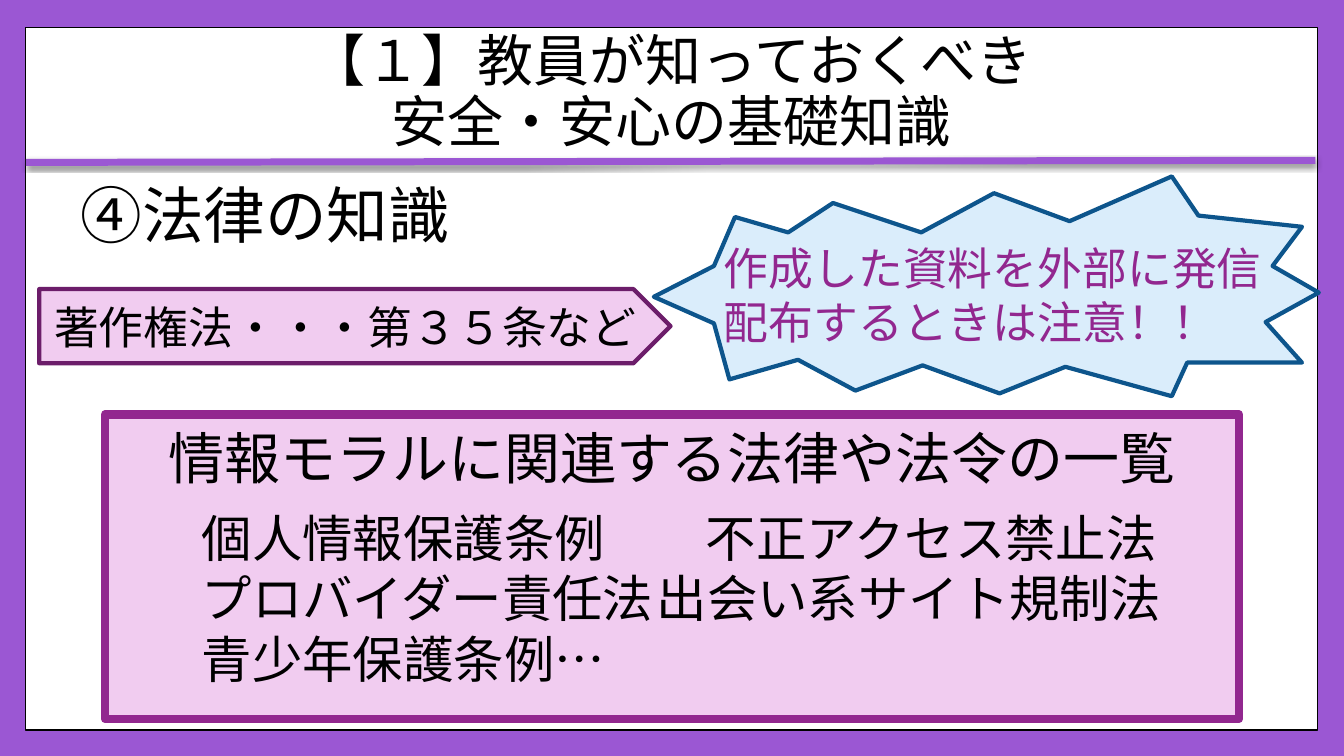
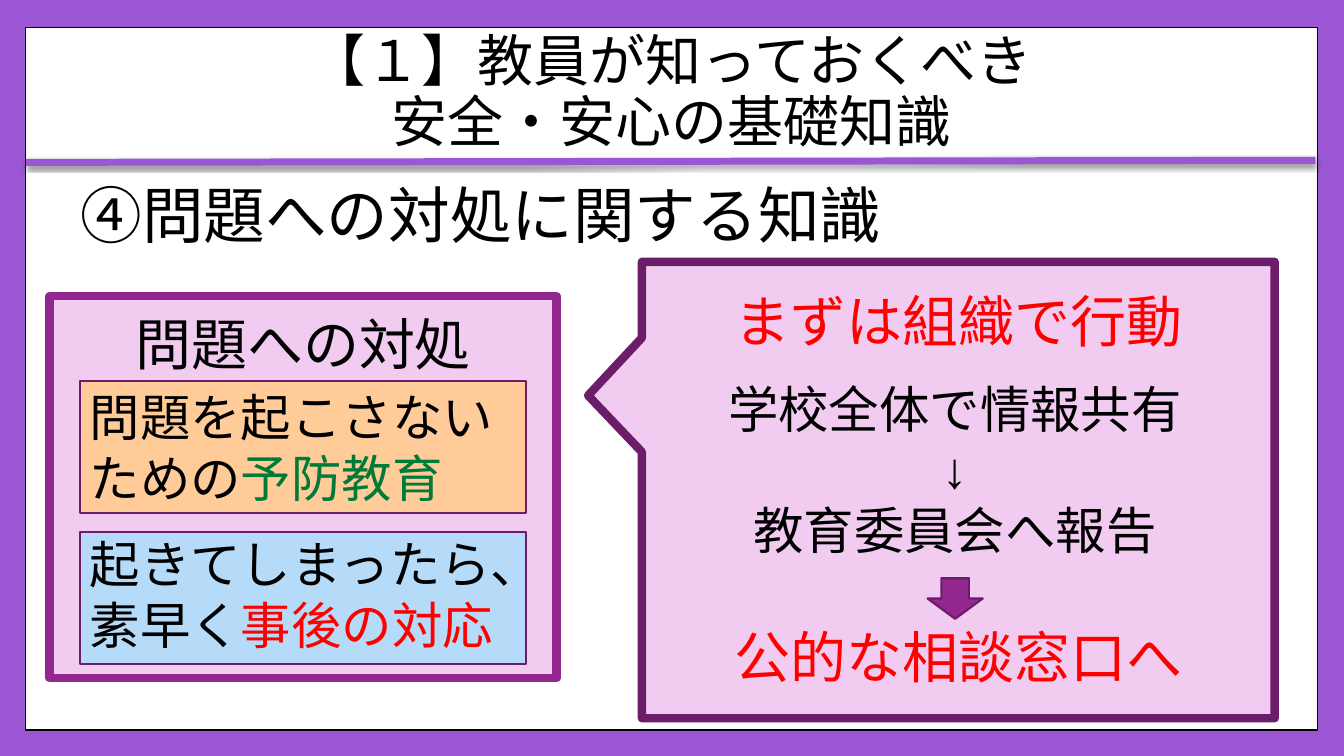
from lxml import etree
from pptx import Presentation
from pptx.dml.color import RGBColor
from pptx.enum.shapes import MSO_CONNECTOR, MSO_SHAPE
from pptx.enum.text import MSO_ANCHOR, PP_ALIGN
from pptx.oxml.ns import qn
from pptx.util import Pt

RECTANGLE = MSO_SHAPE.RECTANGLE
PENTAGON = MSO_SHAPE.PENTAGON
CALLOUT = MSO_SHAPE.RECTANGULAR_CALLOUT
DOWN_ARROW = MSO_SHAPE.DOWN_ARROW
STRAIGHT = MSO_CONNECTOR.STRAIGHT
TOP, MIDDLE = MSO_ANCHOR.TOP, MSO_ANCHOR.MIDDLE
LEFT, CENTER = PP_ALIGN.LEFT, PP_ALIGN.CENTER

COLORS = {
    "frame": "9B57D3",
    "white": "FFFFFF",
    "black": "000000",
    "pink": "F1CCF0",
    "purple": "92278F",
    "plum": "6C1D6A",
    "sky": "DAEDFB",
    "navy": "0D558C",
    "orange": "FFCC99",
    "blue": "B5DBF8",
    "green": "007A37",
    "red": "FF0000",
}
TITLE_FONT, BODY_FONT = "Roboto", "Arial"
TITLE = "【１】教員が知っておくべき\n安全・安心の基礎知識"

BURST_POINTS = [
    (467, 212), (510, 190), (525, 155), (563, 166), (595, 145), (658, 166),
    (710, 138), (764, 158), (837, 126), (856, 154), (930, 162), (909, 190),
    (942, 209), (904, 230), (930, 259), (848, 259), (837, 283), (761, 262),
    (714, 281), (659, 261), (611, 279), (570, 257), (521, 271), (510, 231),
]


def rgb(name):
    return RGBColor.from_string(COLORS[name])


def paint(shape, fill, line, weight):
    shape.shadow.inherit = False
    shape.fill.solid()
    shape.fill.fore_color.rgb = rgb(fill)
    shape.line.color.rgb = rgb(line)
    shape.line.width = Pt(weight)


def add_box(page, kind, bounds, fill, line, weight):
    box = page.shapes.add_shape(kind, *map(Pt, bounds))
    paint(box, fill, line, weight)
    return box


def set_tab(para, position):
    """Put one left tab stop, in points, ahead of the paragraph's font."""
    tabs = etree.Element(qn("a:tabLst"))
    etree.SubElement(tabs, qn("a:tab"), pos=str(Pt(position)), algn="l")
    para.font  # makes sure that the font element exists
    para._p.pPr.find(qn("a:defRPr")).addprevious(tabs)


def write(shape, lines, size, color="black", font=BODY_FONT, align=LEFT,
          anchor=TOP, spacing=None, gap=None, inset_top=3.6):
    """Write paragraphs; a line is a string or a list of (text, color)."""
    frame = shape.text_frame
    frame.word_wrap = True
    frame.vertical_anchor = anchor
    frame.margin_top = Pt(inset_top)
    for index, line in enumerate(lines):
        para = frame.add_paragraph() if index else frame.paragraphs[0]
        para.alignment = align
        para.line_spacing = spacing
        if index and gap:
            para.space_before = Pt(gap)
        para.font.size = Pt(size)
        para.font.name = font
        para.font.color.rgb = rgb(color)
        if isinstance(line, str):
            para.text = line
            continue
        for text, span_color in line:
            span = para.add_run()
            span.text = text
            if span_color != color:
                span.font.color.rgb = rgb(span_color)
    return frame


def add_text(page, bounds, lines, size, **style):
    box = page.shapes.add_textbox(*map(Pt, bounds))
    return write(box, lines, size, **style)


def add_title_rule(page):
    rule = page.shapes.add_connector(
        STRAIGHT, Pt(18.5), Pt(116), Pt(939.5), Pt(114.5))
    rule.line.color.rgb = rgb("frame")
    rule.line.width = Pt(5)
    effects = etree.SubElement(rule._element.spPr, qn("a:effectLst"))
    shadow = etree.SubElement(
        effects, qn("a:outerShdw"), blurRad=str(Pt(3)), dist=str(Pt(2)),
        dir="5400000", rotWithShape="0")
    shade = etree.SubElement(shadow, qn("a:srgbClr"), val=COLORS["black"])
    etree.SubElement(shade, qn("a:alpha"), val="45000")


def add_page(deck, heading):
    """Add a page with the shared frame, title, rule and a heading."""
    page = deck.slides.add_slide(deck.slide_layouts[6])
    add_box(page, RECTANGLE, (18, 19.5, 923, 502), "white", "black", 1)
    add_title_rule(page)
    add_text(page, (18.5, 26, 922, 82), [TITLE], 40, font=TITLE_FONT,
             align=CENTER, anchor=MIDDLE, spacing=0.9)
    add_text(page, (50.5, 129, 864, 60), [heading], 44, spacing=0.9)
    return page


def add_panel(page, bounds, heading, inset_top):
    panel = add_box(page, RECTANGLE, bounds, "pink", "purple", 6)
    write(panel, [heading], 40, align=CENTER, spacing=0.8,
          inset_top=inset_top)


def add_burst(page):
    builder = page.shapes.build_freeform(*BURST_POINTS[0], scale=Pt(1))
    builder.add_line_segments(BURST_POINTS[1:], close=True)
    paint(builder.convert_to_shape(), "sky", "navy", 3)


def build_laws(deck):
    page = add_page(deck, "④法律の知識")
    add_panel(page, (75, 296, 810, 217.5),
              "情報モラルに関連する法律や法令の一覧", 16)

    # Copyright law and its warning
    plate = add_box(page, PENTAGON, (28, 206.5, 451, 53), "pink", "plum", 3)
    write(plate, ["著作権法・・・第３５条など"], 32, font=TITLE_FONT,
          align=CENTER, anchor=MIDDLE)
    add_burst(page)
    add_text(page, (510, 168.5, 400, 85),
             ["作成した資料を外部に発信", "配布するときは注意！！"], 32,
             color="purple")

    # List of laws
    laws = add_text(page, (137, 358.5, 803, 138),
                    ["個人情報保護条例\t不正アクセス禁止法",
                     "プロバイダー責任法\t出会い系サイト規制法",
                     "青少年保護条例…"], 36)
    for para, position in zip(laws.paragraphs, (360, 325)):
        set_tab(para, position)


def build_responses(deck):
    page = add_page(deck, "④問題への対処に関する知識")

    # Prevention and follow-up
    add_panel(page, (35.5, 211.5, 362, 273), "問題への対処", 19)
    prevention = add_box(page, RECTANGLE, (57, 272, 319, 94.5),
                         "orange", "plum", 1.5)
    write(prevention, [[("問題を起こさないための", "black"),
                        ("予防教育", "green")]], 36, anchor=MIDDLE)
    follow_up = add_box(page, RECTANGLE, (57, 380, 319, 94.5),
                        "blue", "plum", 1.5)
    write(follow_up, [[("起きてしまったら、素早く", "black"),
                       ("事後の対応", "red")]], 36, inset_top=1)

    # Steps for acting as an organisation
    callout = add_box(page, CALLOUT, (458.5, 187, 452, 326),
                      "pink", "plum", 6)
    callout.adjustments[0] = -0.585
    callout.adjustments[1] = -0.207
    write(callout, ["まずは組織で行動", "公的な相談窓口へ"], 40, color="red",
          align=CENTER, gap=192, inset_top=18)
    add_text(page, (494.5, 266.5, 375, 138),
             ["学校全体で情報共有", "↓", "教育委員会へ報告"], 36,
             align=CENTER)
    add_box(page, DOWN_ARROW, (662.5, 413, 39.5, 29), "purple", "plum", 1.5)


def main():
    deck = Presentation()
    deck.slide_width, deck.slide_height = Pt(960), Pt(540)
    backdrop = deck.slide_master.background.fill
    backdrop.solid()
    backdrop.fore_color.rgb = rgb("frame")
    build_laws(deck)
    build_responses(deck)
    deck.save("out.pptx")


if __name__ == "__main__":
    main()
